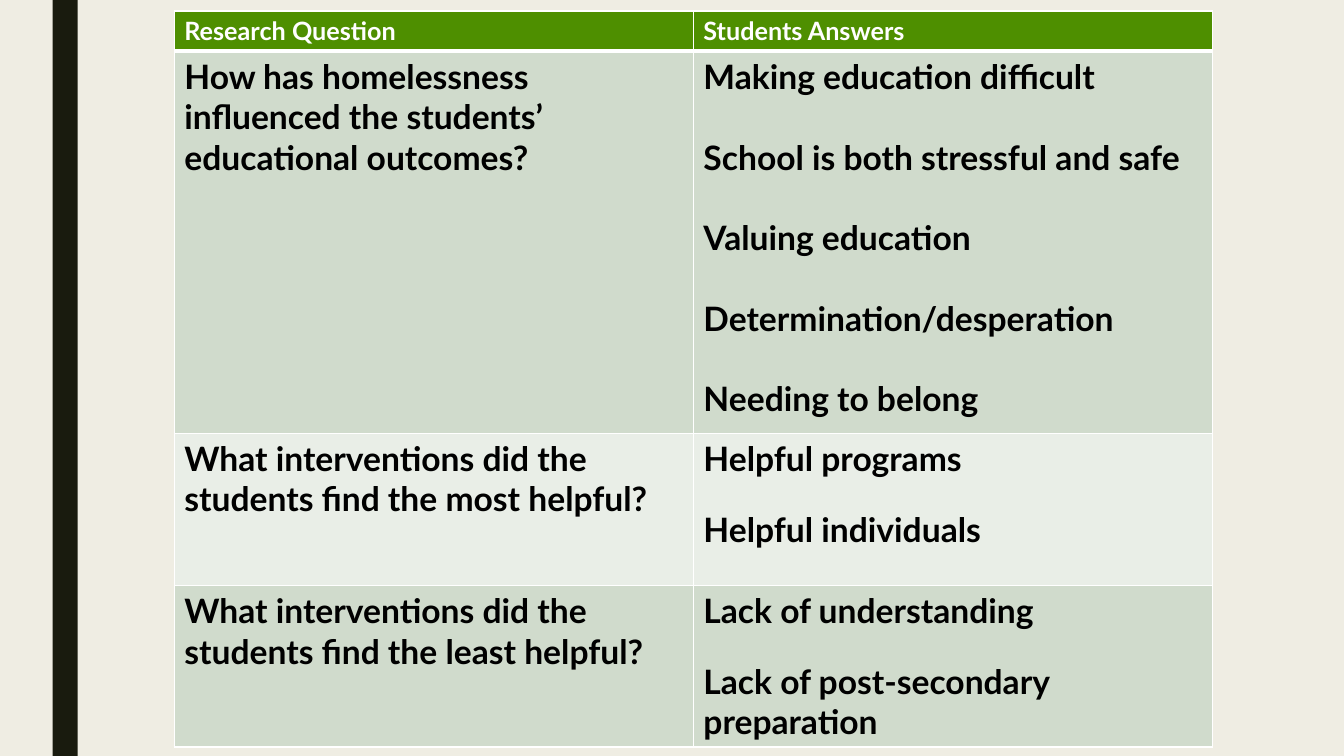
"""Build a slide with a table of research questions and student answers."""
from lxml.etree import SubElement
from pptx import Presentation
from pptx.dml.color import RGBColor
from pptx.enum.shapes import MSO_SHAPE as Shape
from pptx.oxml.ns import qn
from pptx.util import Pt

COLOURS = {
    "background": "EFEDE3",
    "bar": "191B0E",
    "header": "4E8F00",
    "band": "D0DBCC",
    "light band": "E9EEE7",
    "white": "FFFFFF",
    "black": "000000",
}
HEADINGS = ["Research Question", "Students Answers"]
FINDINGS = [
    ("How has homelessness influenced the students’ educational outcomes?",
     ["Making education difficult", "School is both stressful and safe",
      "Valuing education", "Determination/desperation", "Needing to belong"],
     273, 28.8),
    ("What interventions did the students find the most helpful?",
     ["Helpful programs", "Helpful individuals"],
     108.7, 21.6),
    ("What interventions did the students find the least helpful?",
     ["Lack of understanding", "Lack of post-secondary preparation"],
     115.2, 21.6),
]


class SlideBuilder:
    """Hold the style and the current slide, and add elements to it."""

    font = "Lato"

    def __init__(self, slide):
        self.slide = slide

    def colour(self, name):
        return RGBColor.from_string(COLOURS[name])

    def paint(self, fill, name):
        fill.solid()
        fill.fore_color.rgb = self.colour(name)

    def background(self, name):
        self.paint(self.slide.background.fill, name)

    def bar(self, left, top, width, height, name):
        shape = self.slide.shapes.add_shape(
            Shape.RECTANGLE, Pt(left), Pt(top), Pt(width), Pt(height))
        shape.shadow.inherit = False
        self.paint(shape.fill, name)
        shape.line.fill.background()

    def table(self, left, top, column_widths, row_heights):
        table = self.slide.shapes.add_table(
            len(row_heights), len(column_widths), Pt(left), Pt(top),
            Pt(sum(column_widths)), Pt(sum(row_heights))).table
        for column, width in zip(table.columns, column_widths):
            column.width = Pt(width)
        for row, height in zip(table.rows, row_heights):
            row.height = Pt(height)
        return table

    def cell(self, cell, lines, size, text_colour, fill, gap=0, top=1, bottom=1):
        self.borders(cell, {"lnL": 1, "lnR": 1, "lnT": top, "lnB": bottom})
        self.paint(cell.fill, fill)
        cell.text_frame.text = "\n".join(lines)
        for index, paragraph in enumerate(cell.text_frame.paragraphs):
            paragraph.space_before = Pt(gap if index else 0)
            for run in paragraph.runs:
                run.font.name = self.font
                run.font.size = Pt(size)
                run.font.bold = True
                run.font.color.rgb = self.colour(text_colour)

    def borders(self, cell, widths):
        properties = cell._tc.get_or_add_tcPr()
        for side, width in widths.items():
            line = SubElement(properties, qn(f"a:{side}"), w=str(Pt(width)))
            fill = SubElement(line, qn("a:solidFill"))
            SubElement(fill, qn("a:srgbClr"), val=COLOURS["white"])


def main():
    presentation = Presentation()
    presentation.slide_width = Pt(960)
    presentation.slide_height = Pt(540)
    slide = presentation.slides.add_slide(presentation.slide_layouts[6])
    builder = SlideBuilder(slide)
    builder.background("background")
    builder.bar(37.5, 0, 18, 540, "bar")

    heights = [28] + [height for _, _, height, _ in FINDINGS]
    table = builder.table(124.5, 7.8, [370.8, 370.8], heights)
    for column, heading in enumerate(HEADINGS):
        builder.cell(table.cell(0, column), [heading], 18, "white", "header", bottom=3)
    for row, (question, answers, _, gap) in enumerate(FINDINGS, start=1):
        fill = "band" if row % 2 else "light band"
        top = 3 if row == 1 else 1
        for column, lines in enumerate([[question], answers]):
            builder.cell(table.cell(row, column), lines, 24, "black", fill, gap, top)
    presentation.save("out.pptx")


if __name__ == "__main__":
    main()
